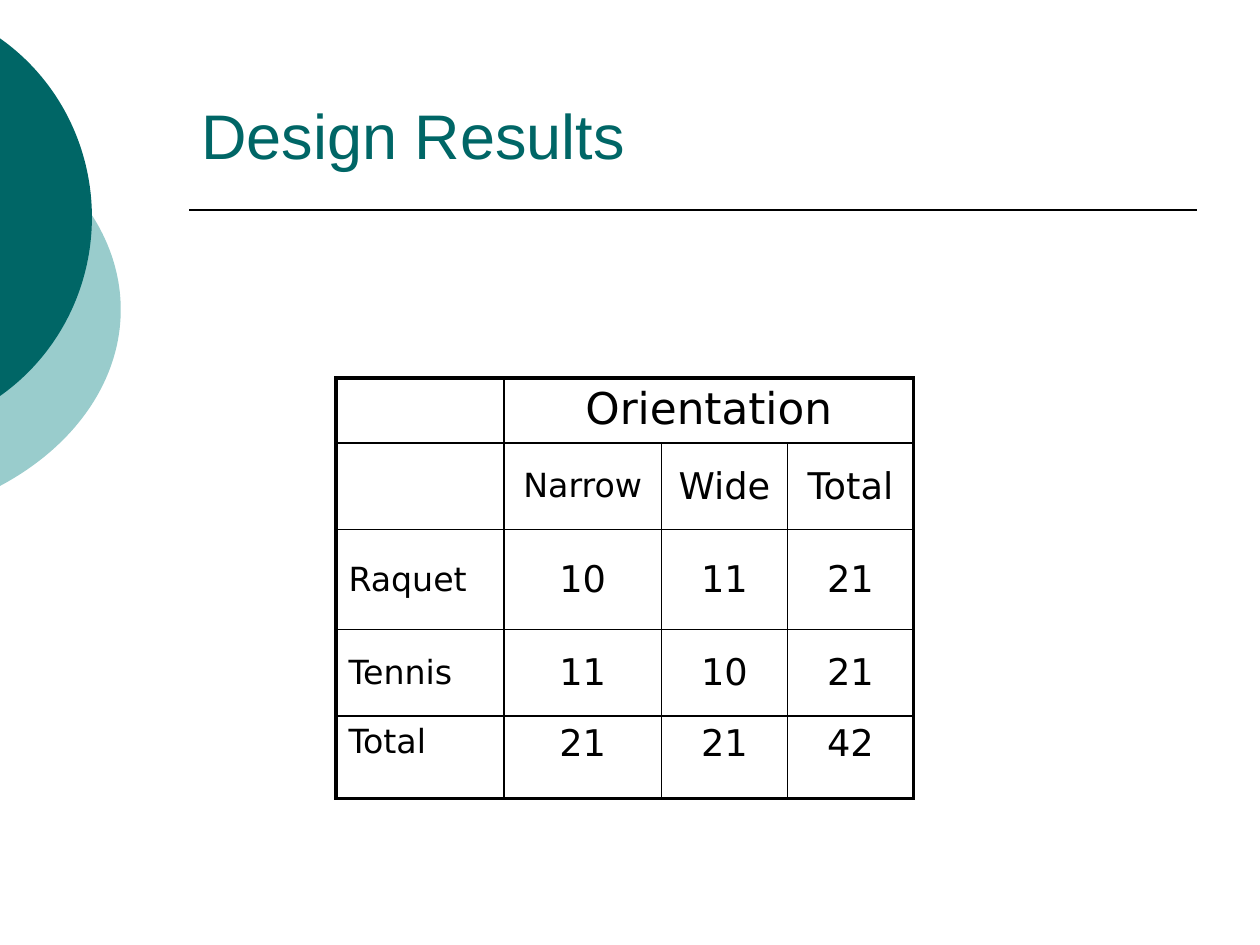
"""Builds the Design Results slide with its orientation table."""
from dataclasses import dataclass, field

from lxml.etree import SubElement
from pptx import Presentation
from pptx.dml.color import RGBColor
from pptx.enum.shapes import MSO_CONNECTOR, MSO_SHAPE
from pptx.enum.text import MSO_ANCHOR, PP_ALIGN
from pptx.oxml.ns import qn
from pptx.slide import Slide
from pptx.util import Pt

PX = 9525
COLORS = {"title": "006666", "light": "99CCCC", "ink": "000000"}
COLUMN_WIDTHS = [128, 120, 96, 96]
ROW_HEIGHTS = [41, 66, 76, 66, 63]
ROWS = [
    ["", "Orientation", "", ""],
    ["", "Narrow", "Wide", "Total"],
    ["Raquet", "10", "11", "21"],
    ["Tennis", "11", "10", "21"],
    ["Total", "21", "21", "42"],
]


@dataclass
class SlideBuilder:
    slide: Slide
    title_font: str = "Arial"
    table_font: str = "DejaVu Sans"
    colors: dict = field(default_factory=lambda: COLORS)

    def color(self, name):
        return RGBColor.from_string(self.colors[name])

    def format_text(self, paragraph, font_name, size, color):
        for run in paragraph.runs:
            run.font.name = font_name
            run.font.size = Pt(size)
            run.font.color.rgb = self.color(color)

    def disc(self, left, top, width, height, color):
        shape = self.slide.shapes.add_shape(
            MSO_SHAPE.OVAL, left * PX, top * PX, width * PX, height * PX)
        shape.shadow.inherit = False
        shape.fill.solid()
        shape.fill.fore_color.rgb = self.color(color)
        shape.line.fill.background()

    def rule(self, left, top, right, width):
        connector = self.slide.shapes.add_connector(
            MSO_CONNECTOR.STRAIGHT, left * PX, top * PX, right * PX, top * PX)
        connector.line.color.rgb = self.color("ink")
        connector.line.width = Pt(width)
        SubElement(connector._element.spPr, qn("a:effectLst"))

    def title(self, text, left, top, width, height, size):
        shape = self.slide.shapes.add_textbox(left * PX, top * PX, width * PX, height * PX)
        text_frame = shape.text_frame
        text_frame.word_wrap = True
        text_frame.vertical_anchor = MSO_ANCHOR.BOTTOM
        text_frame.text = text
        self.format_text(text_frame.paragraphs[0], self.title_font, size, "title")

    def borders(self, cell, outer_edges, outer=2.25, inner=1):
        properties = cell._tc.get_or_add_tcPr()
        for edge, is_outer in outer_edges.items():
            line = SubElement(properties, qn(f"a:ln{edge}"))
            line.set("w", str(Pt(outer if is_outer else inner)))
            fill = SubElement(line, qn("a:solidFill"))
            SubElement(fill, qn("a:srgbClr")).set("val", self.colors["ink"])

    def cell_text(self, cell, text, size, alignment, anchor):
        cell.vertical_anchor = anchor
        cell.text_frame.text = text
        paragraph = cell.text_frame.paragraphs[0]
        paragraph.alignment = alignment
        spacing = SubElement(paragraph._p.get_or_add_pPr(), qn("a:spcBef"))
        SubElement(spacing, qn("a:spcPct")).set("val", "20000")
        self.format_text(paragraph, self.table_font, size, "ink")

    def table(self, rows, left, top, column_widths, row_heights):
        last_row, last_column = len(rows) - 1, len(column_widths) - 1
        table = self.slide.shapes.add_table(
            len(rows), len(column_widths), left * PX, top * PX,
            sum(column_widths) * PX, sum(row_heights) * PX).table
        table.first_row = table.horz_banding = False
        for column, width in zip(table.columns, column_widths):
            column.width = width * PX
        for row, height in zip(table.rows, row_heights):
            row.height = height * PX
        table.cell(0, 1).merge(table.cell(0, last_column))
        for row, texts in enumerate(rows):
            middle = 0 < row < last_row
            anchor = MSO_ANCHOR.MIDDLE if middle else MSO_ANCHOR.TOP
            for column, text in enumerate(texts):
                cell = table.cell(row, column)
                end = column + cell.span_width - 1
                self.borders(cell, {"L": column == 0, "R": end == last_column,
                                    "T": row == 0, "B": row == last_row})
                cell.fill.background()
                if text:
                    small = column == 0 or text == "Narrow"
                    size = 25 if row == 0 else 19 if small else 21
                    alignment = PP_ALIGN.CENTER if column else PP_ALIGN.LEFT
                    self.cell_text(cell, text, size, alignment, anchor)


def main():
    presentation = Presentation()
    presentation.slide_width = 960 * PX
    presentation.slide_height = 720 * PX
    builder = SlideBuilder(presentation.slides.add_slide(presentation.slide_layouts[6]))
    builder.disc(-340, 72, 432, 328, "light")
    builder.disc(-254, 0, 324, 331, "title")
    builder.rule(144, 160, 912, 1)
    builder.title("Design Results", 144, 32, 768, 104, 36)
    builder.table(ROWS, 256, 288, COLUMN_WIDTHS, ROW_HEIGHTS)
    presentation.save("out.pptx")


if __name__ == "__main__":
    main()
